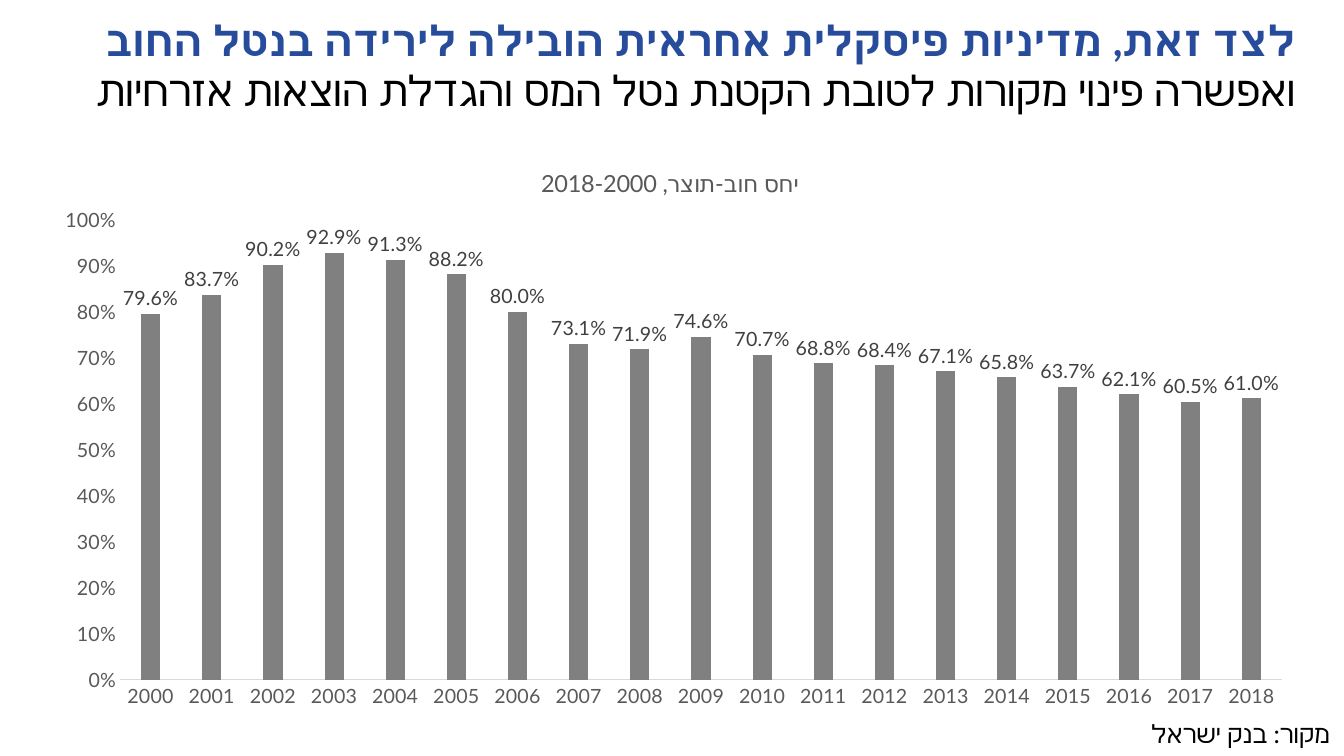
from dataclasses import dataclass

import pptx
import pptx.chart.data
import pptx.dml.color
import pptx.enum.chart
import pptx.enum.text
import pptx.oxml
import pptx.oxml.ns
import pptx.util


@dataclass(frozen=True)
class Theme:
    font: str = "Lato"
    chart_font: str = "Calibri"
    blue: str = "284C9C"
    black: str = "000000"
    bar: str = "808080"
    axis_text: str = "595959"
    axis_line: str = "D9D9D9"
    label_text: str = "404040"
    heading_size: float = 30
    source_size: float = 18
    chart_title_size: float = 16.8
    chart_size: float = 14


def px(count):
    return pptx.util.Emu(round(count * 914400 / 100.8))


def rgb(color):
    return pptx.dml.color.RGBColor.from_string(color)


class SlideBuilder:
    def __init__(self, deck, theme):
        self.theme = theme
        self.page = deck.slides.add_slide(deck.slide_layouts[6])

    def style_font(self, font, size, color, bold=False, name=None):
        font.name = name or self.theme.font
        font.size = pptx.util.Pt(size)
        font.bold = bold
        font.color.rgb = rgb(color)

    def add_hebrew(self, para, runs, size):
        """Fill a right-to-left paragraph with (text, color, bold) runs."""
        para._p.get_or_add_pPr().set("rtl", "1")
        for text, color, bold in runs:
            span = para.add_run()
            span.text = text
            self.style_font(span.font, size, color, bold)
            complex_font = pptx.oxml.parse_xml(
                f'<a:cs {pptx.oxml.ns.nsdecls("a")} typeface="{self.theme.font}"/>')
            span._r.get_or_add_rPr().append(complex_font)

    def add_text(self, left, top, width, height, runs, size, anchor):
        box = self.page.shapes.add_textbox(px(left), px(top), px(width), px(height))
        frame = box.text_frame
        frame.word_wrap = True
        frame.vertical_anchor = anchor
        para = frame.paragraphs[0]
        para.alignment = pptx.enum.text.PP_ALIGN.RIGHT
        self.add_hebrew(para, runs, size)

    def add_columns(self, frame, plot_area, title, categories, values, label_texts):
        """Draw a column chart; frame and plot_area are left, top, width, height."""
        theme = self.theme
        data = pptx.chart.data.CategoryChartData(number_format="0.0%")
        data.categories = categories
        data.add_series("Series 1", values)
        chart = self.page.shapes.add_chart(
            pptx.enum.chart.XL_CHART_TYPE.COLUMN_CLUSTERED, *map(px, frame), data).chart
        self.style_font(chart.font, theme.chart_size, theme.black, name=theme.chart_font)
        chart.has_legend = False
        chart.has_title = True
        self.add_hebrew(chart.chart_title.text_frame.paragraphs[0],
                        [(title, theme.axis_text, False)], theme.chart_title_size)
        chart.chart_title.include_in_layout = False
        self.place_plot(chart, frame, plot_area)
        self.style_axes(chart)
        self.style_bars(chart.plots[0], label_texts)

    def place_plot(self, chart, frame, plot_area):
        left, top, width, height = frame
        plot_left, plot_top, plot_width, plot_height = plot_area
        shares = {"x": (plot_left - left) / width, "y": (plot_top - top) / height,
                  "w": plot_width / width, "h": plot_height / height}
        modes = "".join(f'<c:{key}Mode val="edge"/>' for key in "xy")
        sizes = "".join(f'<c:{key} val="{share:.4f}"/>' for key, share in shares.items())
        layout = pptx.oxml.parse_xml(
            f'<c:layout {pptx.oxml.ns.nsdecls("c")}><c:manualLayout>'
            f'<c:layoutTarget val="inner"/>{modes}{sizes}</c:manualLayout></c:layout>')
        area = chart._chartSpace.chart.plotArea
        for old in area.findall(pptx.oxml.ns.qn("c:layout")):
            area.remove(old)
        area.insert(0, layout)

    def style_axes(self, chart):
        theme = self.theme
        years, shares = chart.category_axis, chart.value_axis
        for axis in (years, shares):
            axis.has_major_gridlines = False
            axis.major_tick_mark = pptx.enum.chart.XL_TICK_MARK.NONE
            axis.minor_tick_mark = pptx.enum.chart.XL_TICK_MARK.NONE
            self.style_font(axis.tick_labels.font, theme.chart_size, theme.axis_text)
        years.format.line.color.rgb = rgb(theme.axis_line)
        years.format.line.width = pptx.util.Pt(0.75)
        shares.format.line.fill.background()
        shares.minimum_scale, shares.maximum_scale = 0, 1
        shares.major_unit = 0.1
        shares.tick_labels.number_format = "0%"
        shares.tick_labels.number_format_is_linked = False

    def style_bars(self, plot, label_texts):
        theme = self.theme
        outside = pptx.enum.chart.XL_LABEL_POSITION.OUTSIDE_END
        plot.gap_width = 219
        plot.overlap = -27
        plot.vary_by_categories = False
        series = plot.series[0]
        series.format.fill.solid()
        series.format.fill.fore_color.rgb = rgb(theme.bar)
        labels = series.data_labels
        labels.show_value = True
        labels.number_format = "0.0%"
        labels.number_format_is_linked = False
        labels.position = outside
        self.style_font(labels.font, theme.chart_size, theme.label_text)
        for index, text in label_texts.items():
            label = series.points[index].data_label
            span = label.text_frame.paragraphs[0].add_run()
            span.text = text
            self.style_font(span.font, theme.chart_size, theme.label_text)
            label.position = outside


def main():
    theme = Theme()
    deck = pptx.Presentation()
    deck.slide_width, deck.slide_height = px(1344), px(756)
    slide = SlideBuilder(deck, theme)
    anchors = pptx.enum.text.MSO_ANCHOR

    slide.add_text(33, 2, 1274, 126, [
        ("לצד זאת, מדיניות פיסקלית אחראית הובילה לירידה בנטל החוב ", theme.blue, True),
        ("ואפשרה פינוי מקורות לטובת הקטנת נטל המס והגדלת הוצאות אזרחיות", theme.black, False),
    ], theme.heading_size, anchors.MIDDLE)
    slide.add_text(1067, 713, 273, 40, [("מקור: בנק ישראל", theme.black, False)],
                   theme.source_size, anchors.TOP)

    debt_ratios = [0.796, 0.837, 0.902, 0.929, 0.913, 0.882, 0.8, 0.731, 0.719, 0.746,
                   0.707, 0.688, 0.684, 0.671, 0.658, 0.637, 0.621, 0.605, 0.612]
    years = [str(year) for year in range(2000, 2019)]
    slide.add_columns((33, 146, 1274, 573), (120, 220, 1162, 460),
                      "יחס חוב-תוצר, 2018-2000", years, debt_ratios, {18: "61.0%"})
    deck.save("out.pptx")


if __name__ == "__main__":
    main()
